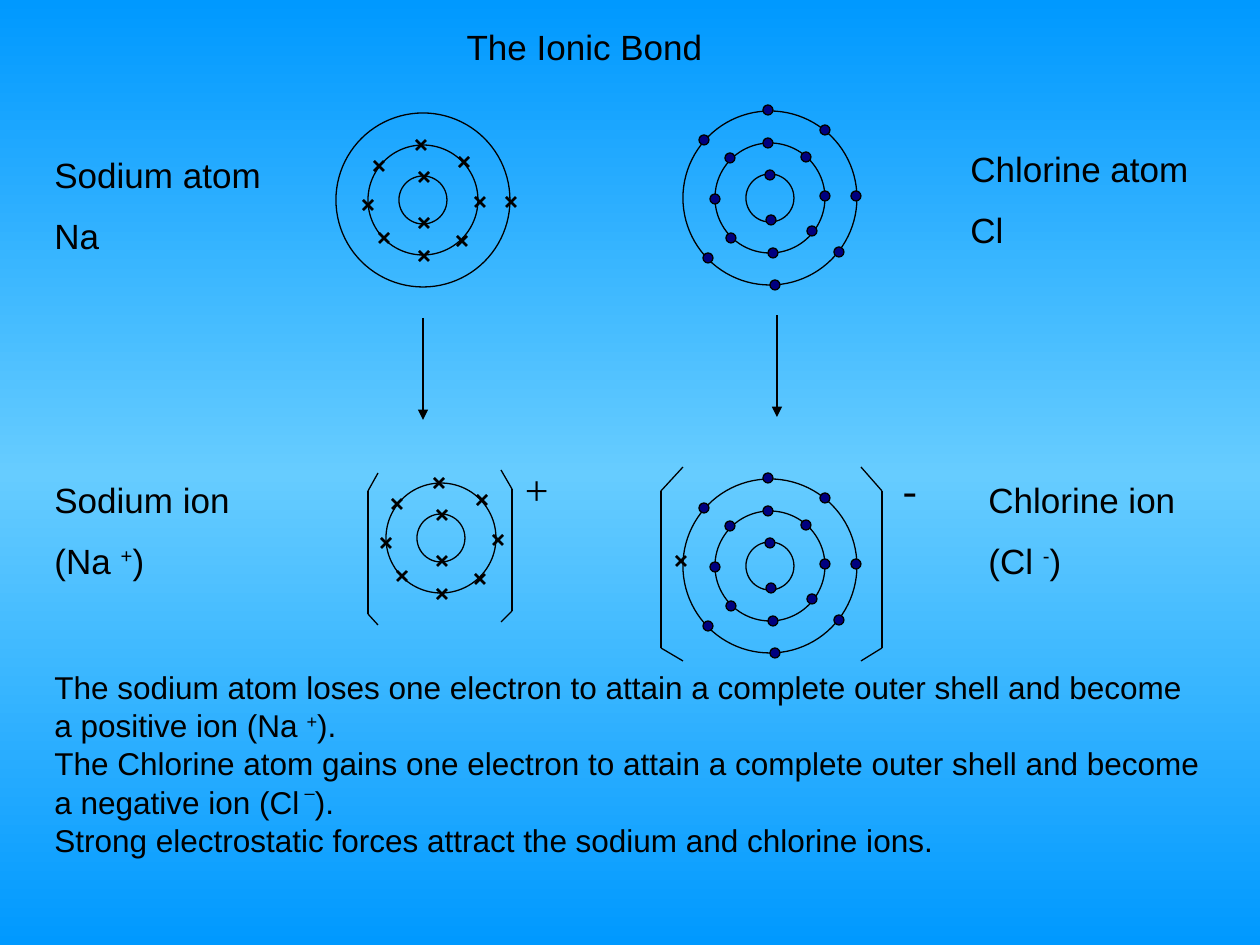
"""Build the slide on the ionic bond between sodium and chlorine."""
from copy import deepcopy
from dataclasses import dataclass

from lxml.etree import SubElement
from pptx import Presentation
from pptx.dml.color import RGBColor
from pptx.enum.shapes import MSO_CONNECTOR, MSO_SHAPE
from pptx.enum.text import MSO_ANCHOR, MSO_AUTO_SIZE, PP_ALIGN
from pptx.oxml.ns import qn
from pptx.util import Emu, Pt


@dataclass(frozen=True)
class Theme:
    ink: RGBColor = RGBColor(0, 0, 0)
    dot: RGBColor = RGBColor(0, 0, 0x80)
    edge: RGBColor = RGBColor(0, 0x99, 0xFF)
    mid: RGBColor = RGBColor(0x66, 0xCC, 0xFF)
    sans: str = "Arial"
    serif: str = "Times New Roman"
    label: int = 20
    body: int = 18
    sign: int = 24
    thin: float = 0.75
    bold: float = 1.5


theme = Theme()
SCALE = 914400 / 126


def px(*nums):
    return [Emu(round(num * SCALE)) for num in nums]


def line(home, ends, width):
    link = home.add_connector(MSO_CONNECTOR.STRAIGHT, *px(*ends))
    link.line.color.rgb = theme.ink
    link.line.width = Pt(width)
    SubElement(link._element.spPr, qn("a:effectLst"))
    return link


deck = Presentation()
deck.slide_width, deck.slide_height = px(1260, 945)
slide = deck.slides.add_slide(deck.slide_layouts[5])

fill = slide.background.fill
fill.gradient()
fill.gradient_angle = 270
stops = next(slide._element.iter(qn("a:gsLst")))
stops.insert(1, deepcopy(stops[0]))
for stop, place, color in zip(
    fill.gradient_stops, (0, 0.5, 1), (theme.edge, theme.mid, theme.edge)
):
    stop.position = place
    stop.color.rgb = color

RINGS = [48, 110, 174]
SODIUM = [
    (1, -23), (1, 23), (-55, 5), (1, 56), (41, -38),
    (-2, -55), (-44, -34), (39, 41), (-39, 38), (57, 2),
]
CHLORINE = [
    (0, -23), (1, 22), (-40, -40), (42, 33), (36, -41), (-55, 1),
    (55, -2), (3, 55), (-2, -55), (-66, -58), (-62, 60), (69, 54),
    (55, -68), (-2, -88), (86, -2), (5, 87), (-39, 40),
]
ATOMS = [
    (423, 200, RINGS, [], SODIUM + [(88, 2)]),
    (441, 538, RINGS[:2], [], SODIUM),
    (770, 198, RINGS, CHLORINE, []),
    (770, 566, RINGS, CHLORINE, [(-89, -5)]),
]
for x, y, rings, dots, marks in ATOMS:
    atom = slide.shapes.add_group_shape().shapes
    ovals = [(0, 0, size, None) for size in rings]
    ovals += [(dx, dy, 10, theme.dot) for dx, dy in dots]
    for dx, dy, size, color in ovals:
        box = px(x + dx - size / 2, y + dy - size / 2, size, size)
        oval = atom.add_shape(MSO_SHAPE.OVAL, *box)
        oval.shadow.inherit = False
        oval.line.color.rgb = theme.ink
        oval.line.width = Pt(theme.thin)
        if color is None:
            oval.fill.background()
        else:
            oval.fill.solid()
            oval.fill.fore_color.rgb = color
    for dx, dy in marks:
        for tilt in (5, -5):
            ends = (x + dx - 5, y + dy - tilt, x + dx + 5, y + dy + tilt)
            line(atom, ends, theme.bold)

for x, top, end in [(423, 318, 420), (777, 315, 417)]:
    arrow = line(slide.shapes, (x, top, x, end), theme.thin)
    SubElement(arrow.line._get_or_add_ln(), qn("a:tailEnd"), type="triangle")

BRACKETS = [
    (512, 501, 470, 489, 611, 622),
    (882, 861, 467, 491, 648, 661),
    (661, 683, 467, 491, 648, 661),
    (368, 378, 473, 491, 614, 625),
]
for x, tip, peak, top, low, foot in BRACKETS:
    bracket = slide.shapes.add_group_shape().shapes
    for ends in [(x, top, x, low), (x, top, tip, peak), (x, low, tip, foot)]:
        line(bracket, ends, theme.thin)

title = slide.shapes.title
title.left, title.top, title.width, title.height = px(454, 19, 346, 54)
frame = title.text_frame
frame.text = "The Ionic Bond"
frame.word_wrap = True
frame.auto_size = MSO_AUTO_SIZE.NONE
frame.vertical_anchor = MSO_ANCHOR.TOP
head = frame.paragraphs[0]
head.alignment = PP_ALIGN.LEFT
head.font.name = theme.sans
head.font.size = Pt(theme.label)
head.font.color.rgb = theme.ink

BODY = [
    "The sodium atom loses one electron to attain a complete outer shell "
    "and become a positive ion (Na ^+^).",
    "The Chlorine atom gains one electron to attain a complete outer shell "
    "and become a negative ion (Cl^ –^).",
    "Strong electrostatic forces attract the sodium and chlorine ions.",
]
LABEL = (theme.sans, theme.label, 11)
SIGN = (theme.serif, theme.sign, 0)
TEXTS = [
    ((42, 147, 252, 117), ["Sodium atom", "Na"], LABEL),
    ((42, 472, 252, 117), ["Sodium ion", "(Na ^+^)"], LABEL),
    ((958, 141, 252, 117), ["Chlorine atom", "Cl"], LABEL),
    ((976, 472, 252, 117), ["Chlorine ion", "(Cl ^-^)"], LABEL),
    ((42, 662, 1176, 202), BODY, (theme.sans, theme.body, 0)),
    ((525, 464, 37, 50), ["+"], SIGN),
    ((903, 464, 37, 50), ["-"], SIGN),
]
for box, rows, style in TEXTS:
    face, size, gap = style
    frame = slide.shapes.add_textbox(*px(*box)).text_frame
    frame.word_wrap = True
    frame.auto_size = MSO_AUTO_SIZE.SHAPE_TO_FIT_TEXT
    if style is SIGN:
        frame.margin_left = frame.margin_right = 0
        frame.margin_top = frame.margin_bottom = 0
    for row, words in enumerate(rows):
        para = frame.add_paragraph() if row else frame.paragraphs[0]
        para.space_before = Pt(gap if row else 0)
        para.font.name = face
        para.font.size = Pt(size)
        para.font.color.rgb = theme.ink
        for turn, part in enumerate(words.split("^")):
            run = para.add_run()
            run.text = part
            if turn % 2:
                lift = "46000" if "–" in part else "30000"
                run._r.get_or_add_rPr().set("baseline", lift)

deck.save("out.pptx")
